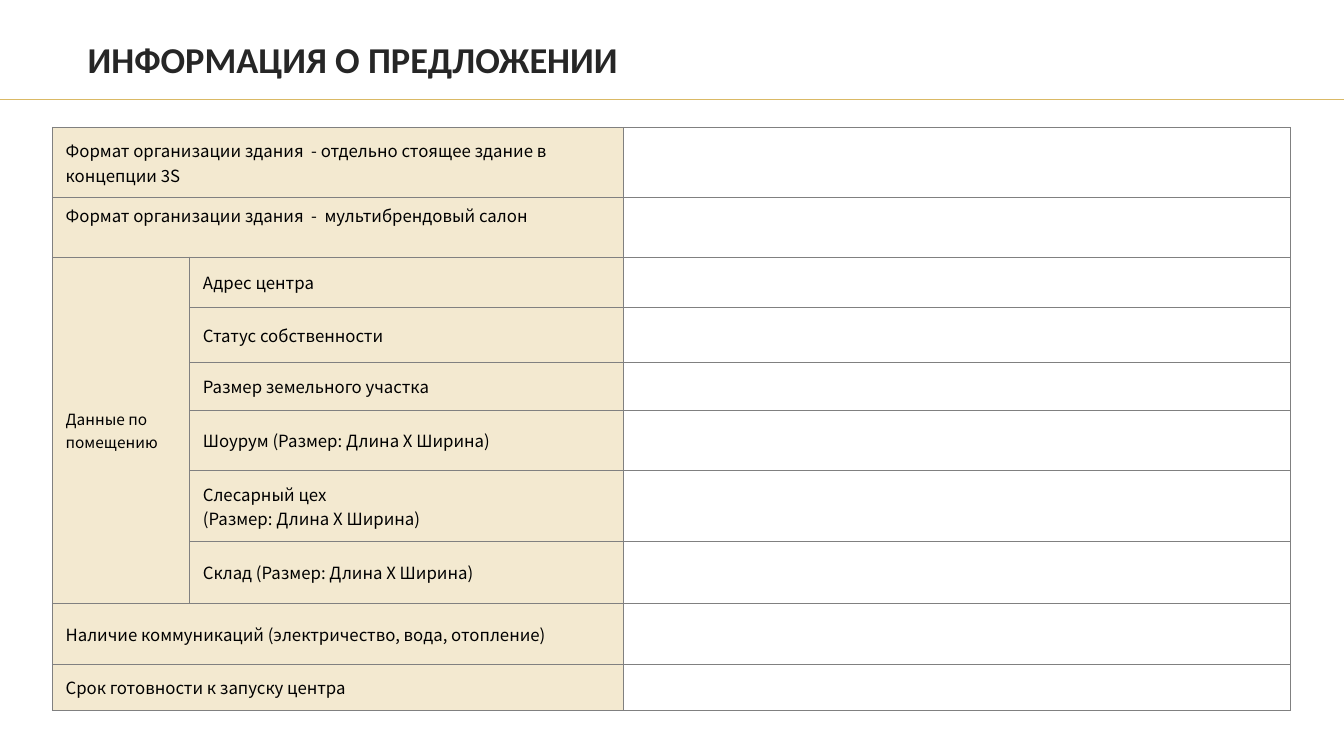
from lxml import etree
from pptx import Presentation
from pptx.dml.color import RGBColor
from pptx.enum import shapes, text
from pptx.oxml import ns
from pptx.util import Pt

TITLE = "ИНФОРМАЦИЯ О ПРЕДЛОЖЕНИИ"
GROUP = "Данные по помещению"
GROUP_ROWS = range(2, 8)
ROWS = [
    ("Формат организации здания  - отдельно стоящее здание в концепции 3S", 50.4),
    ("Формат организации здания  -  мультибрендовый салон", 42.2),
    ("Адрес центра", 36),
    ("Статус собственности", 39.6),
    ("Размер земельного участка", 33.8),
    ("Шоурум (Размер: Длина Х Ширина)", 43.2),
    ("Слесарный цех\n(Размер: Длина Х Ширина)", 50.4),
    ("Склад (Размер: Длина Х Ширина)", 44.6),
    ("Наличие коммуникаций (электричество, вода, отопление)", 43.2),
    ("Срок готовности к запуску центра", 33.1),
]
TOP_ROWS = {1}
COLS = [98, 309.6, 476.6]
COLORS = {"gold": "DAB965", "title": "262626", "text": "000000", "border": "808080"}
FONTS = {"title": "Calibri", "table": "Noto Sans CJK SC"}
SLIDE_W, SLIDE_H = 960, 540


def add_run(p, words, size, font, color, bold=False):
    r = p.add_run()
    r.text = words
    r.font.size, r.font.name, r.font.bold = Pt(size), font, bold
    r.font.color.rgb = RGBColor.from_string(COLORS[color])
    for tag in ("a:ea", "a:cs"):
        etree.SubElement(r.font._element, ns.qn(tag), typeface=font)


def add_borders(cell):
    tc_pr = cell._tc.get_or_add_tcPr()
    for side in "LRTB":
        ln = etree.SubElement(tc_pr, ns.qn(f"a:ln{side}"), w=str(Pt(0.75)))
        fill = etree.SubElement(ln, ns.qn("a:solidFill"))
        etree.SubElement(fill, ns.qn("a:srgbClr"), val=COLORS["border"])


def tint(cell):
    cell.fill.solid()
    cell.fill.fore_color.rgb = RGBColor.from_string(COLORS["gold"])
    clr = cell._tc.tcPr.find(".//" + ns.qn("a:solidFill") + "[last()]/../" + ns.qn("a:solidFill") + "/" + ns.qn("a:srgbClr"))
    clr = cell._tc.tcPr.find(ns.qn("a:solidFill")).find(ns.qn("a:srgbClr")) if clr is None else clr
    direct = cell._tc.tcPr.find(ns.qn("a:solidFill"))
    etree.SubElement(direct.find(ns.qn("a:srgbClr")), ns.qn("a:alpha"), val="30000")


def write_label(cell, label, size, anchor):
    cell.vertical_anchor = anchor
    cell.margin_left = cell.margin_right = Pt(9.5)
    cell.margin_top = cell.margin_bottom = Pt(3.6)
    p = cell.text_frame.paragraphs[0]
    for i, line in enumerate(label.split("\n")):
        if i:
            p.add_line_break()
        add_run(p, line, size, FONTS["table"], "text")


def add_title(s):
    rule = s.shapes.add_connector(shapes.MSO_CONNECTOR.STRAIGHT, 0, Pt(71.2), Pt(SLIDE_W), Pt(71.2))
    rule.line.color.rgb = RGBColor.from_string(COLORS["gold"])
    rule.line.width = Pt(0.5)
    etree.SubElement(rule._element.spPr, ns.qn("a:effectLst"))
    sp = s.shapes.add_textbox(Pt(55.5), Pt(21.6), Pt(877), Pt(44.6))
    tf = sp.text_frame
    tf.word_wrap = True
    tf.vertical_anchor = text.MSO_ANCHOR.MIDDLE
    p = tf.paragraphs[0]
    p.line_spacing = 0.9
    add_run(p, TITLE, 26, FONTS["title"], "title", True)


def add_form(s):
    height = sum(h for _, h in ROWS)
    frame = s.shapes.add_table(len(ROWS), len(COLS), Pt(37.4), Pt(91), Pt(sum(COLS)), Pt(height))
    table = frame.table
    table.first_row = table.horz_banding = False
    for col, width in zip(table.columns, COLS):
        col.width = Pt(width)
    for i, (label, h) in enumerate(ROWS):
        table.rows[i].height = Pt(h)
        for j in range(len(COLS)):
            cell = table.cell(i, j)
            add_borders(cell)
            if j < 2:
                tint(cell)
            else:
                cell.fill.background()
        grouped = i in GROUP_ROWS
        if not grouped:
            table.cell(i, 0).merge(table.cell(i, 1))
        anchor = text.MSO_ANCHOR.TOP if i in TOP_ROWS else text.MSO_ANCHOR.MIDDLE
        write_label(table.cell(i, int(grouped)), label, 12, anchor)
    group = table.cell(GROUP_ROWS[0], 0)
    group.merge(table.cell(GROUP_ROWS[-1], 0))
    write_label(group, GROUP, 11, text.MSO_ANCHOR.MIDDLE)


def main():
    """Build the slide with the offer information form."""
    prs = Presentation()
    prs.slide_width, prs.slide_height = Pt(SLIDE_W), Pt(SLIDE_H)
    s = prs.slides.add_slide(prs.slide_layouts[6])
    add_title(s)
    add_form(s)
    prs.save("out.pptx")


if __name__ == "__main__":
    main()
